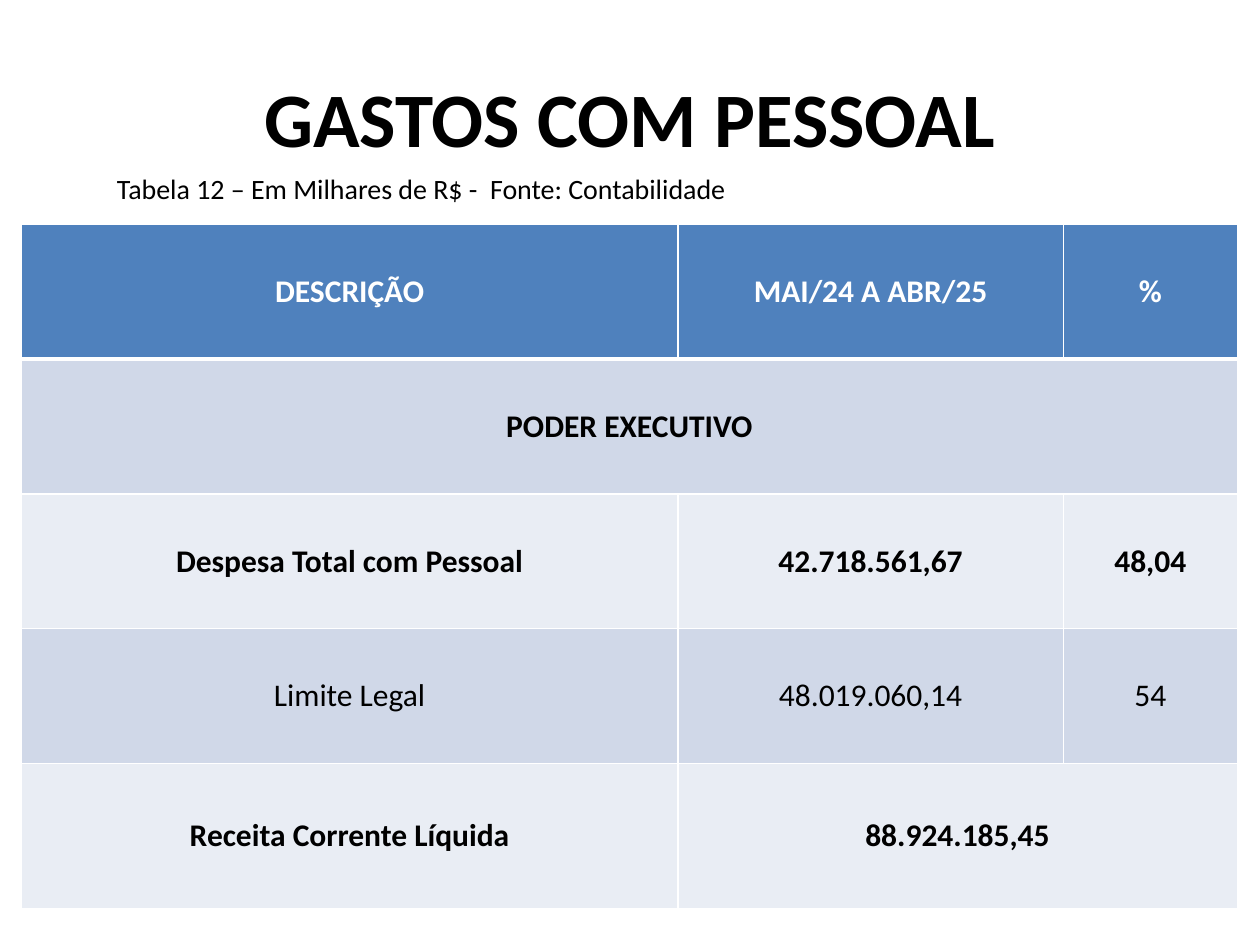
from lxml import etree
from pptx import Presentation
from pptx.dml.color import RGBColor
from pptx.enum.text import MSO_ANCHOR as Anchor, PP_ALIGN as Align
from pptx.oxml.ns import qn
from pptx.util import Inches, Pt

COLORS = {"text": "000000", "white": "FFFFFF", "header": "4F81BD",
          "dark_band": "D0D8E8", "light_band": "E9EDF4"}

COLUMN_WIDTHS = [5.21, 3.06, 1.38]
ROW_HEIGHTS = [1.07] * 4 + [1.15]
# Each row: cell texts (None continues the cell to its left), bold
ROWS = [
    (["DESCRIÇÃO", "MAI/24 A ABR/25", "%"], True),
    (["PODER EXECUTIVO", None, None], True),
    (["Despesa Total com Pessoal", "42.718.561,67", "48,04"], True),
    (["Limite Legal", "48.019.060,14", "54"], False),
    (["Receita Corrente Líquida", "88.924.185,45", None], True),
]


def rgb(name):
    return RGBColor.from_string(COLORS[name])


def write(paragraph, text, color="text", **font_format):
    run = paragraph.add_run()
    run.text = text
    run.font.color.rgb = rgb(color)
    for attribute, value in {"name": "Calibri", **font_format}.items():
        setattr(run.font, attribute, value)


def add_text(slide, box, text, anchor, align, **font_format):
    frame = slide.shapes.add_textbox(*map(Inches, box)).text_frame
    frame.word_wrap = True
    frame.vertical_anchor = anchor
    paragraph = frame.paragraphs[0]
    paragraph.alignment = align
    write(paragraph, text, **font_format)
    return paragraph


def add_heading(slide, title_box, caption_box):
    add_text(slide, title_box, "GASTOS COM PESSOAL", Anchor.MIDDLE,
             Align.CENTER, size=Pt(44), bold=True)
    caption = add_text(slide, caption_box,
                       "Tabela 12 – Em Milhares de R$ -  Fonte: Contabilidade",
                       Anchor.TOP, Align.LEFT, size=Pt(16))
    caption.space_before = Pt(3.2)


def add_borders(cell, bottom_width):
    properties = cell._tc.get_or_add_tcPr()
    widths = {"L": 1, "R": 1, "T": 1, "B": bottom_width}
    for side, width in widths.items():
        line = etree.SubElement(properties, qn(f"a:ln{side}"), w=str(Pt(width)))
        fill = etree.SubElement(line, qn("a:solidFill"))
        etree.SubElement(fill, qn("a:srgbClr"), val=COLORS["white"])


def add_spending_table(slide, box):
    table = slide.shapes.add_table(len(ROWS), len(COLUMN_WIDTHS),
                                   *map(Inches, box)).table
    for column, width in zip(table.columns, COLUMN_WIDTHS):
        column.width = Inches(width)
    for row, height in zip(table.rows, ROW_HEIGHTS):
        row.height = Inches(height)

    for r, (texts, bold) in enumerate(ROWS):
        # Join the cells that continue to the right edge
        if None in texts:
            start = table.cell(r, texts.index(None) - 1)
            start.merge(table.cell(r, len(texts) - 1))
        band = "header" if r == 0 else "dark_band" if r % 2 else "light_band"
        for c, text in enumerate(texts):
            cell = table.cell(r, c)
            add_borders(cell, 3 if r == 0 else 1)
            cell.fill.solid()
            cell.fill.fore_color.rgb = rgb(band)
            if text is None:
                continue
            cell.vertical_anchor = Anchor.MIDDLE
            paragraph = cell.text_frame.paragraphs[0]
            paragraph.alignment = Align.CENTER
            write(paragraph, text, "white" if r == 0 else "text",
                  size=Pt(18), bold=bold)


def main():
    deck = Presentation()
    deck.slide_width, deck.slide_height = Inches(10), Inches(7.5)
    slide = deck.slides.add_slide(deck.slide_layouts[6])
    add_heading(slide, (0.5, 0.3, 9, 1.25), (0.83, 1.31, 9, 0.63))
    add_spending_table(slide, (0.17, 1.78, sum(COLUMN_WIDTHS), sum(ROW_HEIGHTS)))
    deck.save("out.pptx")


if __name__ == "__main__":
    main()
